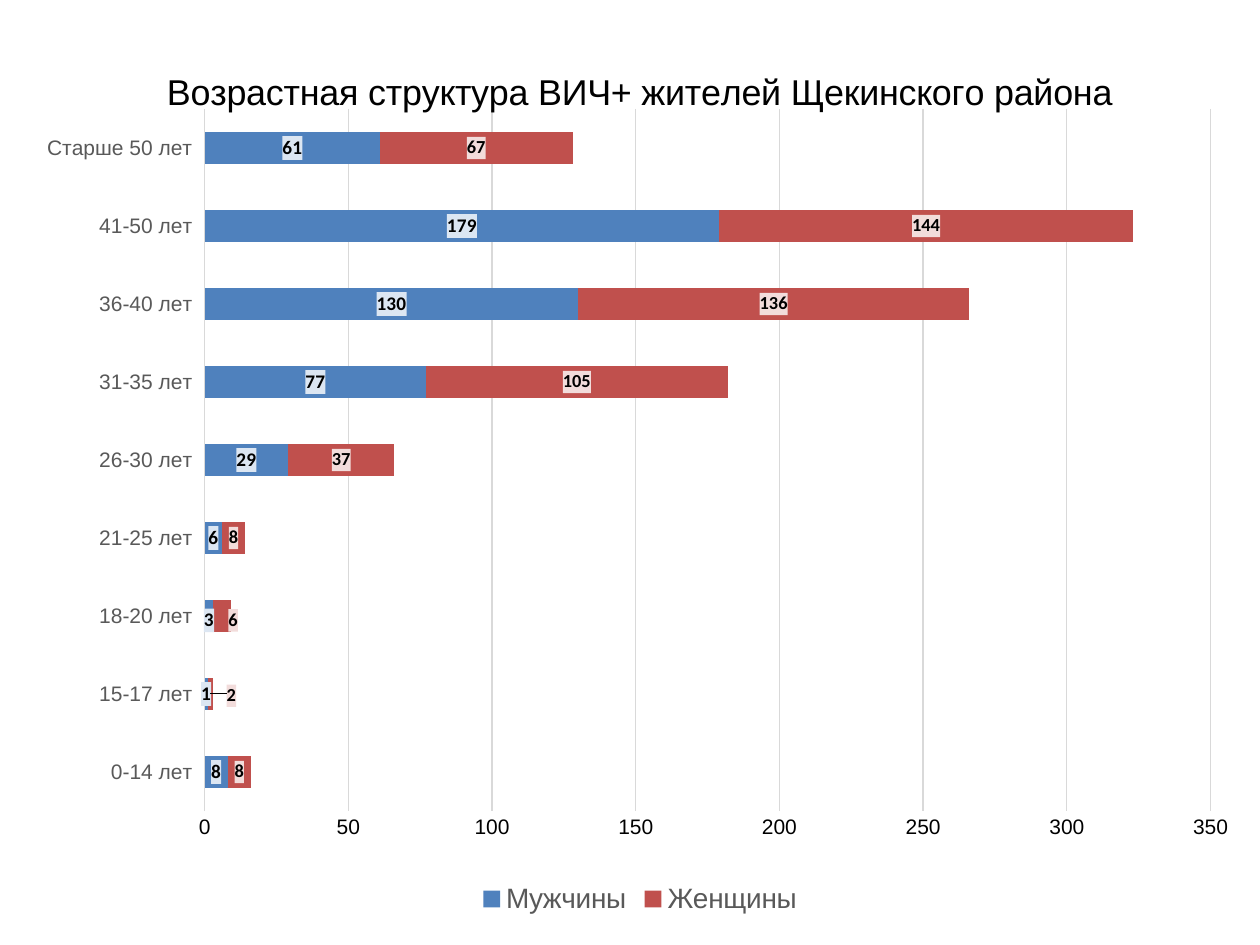
from lxml import etree
from pptx import Presentation
from pptx.chart.data import CategoryChartData
from pptx.dml.color import RGBColor
from pptx.enum.chart import XL_CHART_TYPE as ChartType
from pptx.enum.chart import XL_LABEL_POSITION as LabelPosition
from pptx.enum.chart import XL_LEGEND_POSITION as LegendPosition
from pptx.enum.chart import XL_TICK_LABEL_POSITION as TickLabels
from pptx.enum.chart import XL_TICK_MARK as TickMark
from pptx.oxml import parse_xml
from pptx.oxml.ns import nsdecls, qn
from pptx.util import Pt

TITLE = "Возрастная структура ВИЧ+ жителей Щекинского района"
AGES = ["0-14 лет", "15-17 лет", "18-20 лет", "21-25 лет", "26-30 лет",
        "31-35 лет", "36-40 лет", "41-50 лет", "Старше 50 лет"]
MEN = [8, 1, 3, 6, 29, 77, 130, 179, 61]
WOMEN = [8, 2, 6, 8, 37, 105, 136, 144, 67]
NUMBER_FORMAT = "0;[Red]0"
BLACK, GRAY, RULE = "000000", "595959", "D9D9D9"


def color(value):
    return RGBColor.from_string(value)


def style_font(font, size, value, name="Arial", bold=False):
    font.size = Pt(size)
    font.name = name
    font.bold = bold
    font.color.rgb = color(value)


def style_line(line, value):
    line.color.rgb = color(value)
    line.width = Pt(0.75)


def set_layout(parent, position, **settings):
    old = parent.find(qn("c:layout"))
    if old is not None:
        parent.remove(old)
    layout = parse_xml(f"<c:layout {nsdecls('c')}><c:manualLayout/></c:layout>")
    for tag, value in settings.items():
        etree.SubElement(layout[0], qn(f"c:{tag}")).set("val", str(value))
    parent.insert(position, layout)


def fill_label(element, value):
    fill = parse_xml(
        f'<c:spPr {nsdecls("c", "a")}><a:solidFill><a:srgbClr val="{value}"/>'
        "</a:solidFill><a:ln><a:noFill/></a:ln></c:spPr>")
    element.find(qn("c:txPr")).addprevious(fill)


def style_series(series, bar_color, label_color, size, offsets):
    series.format.fill.solid()
    series.format.fill.fore_color.rgb = color(bar_color)
    series.invert_if_negative = False
    labels = series.data_labels
    labels.show_value = True
    labels.number_format = NUMBER_FORMAT
    labels.number_format_is_linked = False
    labels.position = LabelPosition.CENTER
    style_font(labels.font, size, BLACK, "Calibri", True)
    fill_label(labels._element, label_color)
    for index in offsets:
        label = series.points[index].data_label
        style_font(label.font, size, BLACK, "Calibri", True)
        label.position = LabelPosition.CENTER
    for element in labels._element.findall(qn("c:dLbl")):
        fill_label(element, label_color)
        x, y = offsets[int(element.find(qn("c:idx")).get("val"))]
        set_layout(element, 1, x=x, y=y)


def style_axes(chart):
    ages, counts = chart.category_axis, chart.value_axis
    for axis, value in ((ages, GRAY), (counts, BLACK)):
        axis.major_tick_mark = axis.minor_tick_mark = TickMark.NONE
        style_font(axis.tick_labels.font, 12, value)
    ages.tick_label_position = TickLabels.LOW
    style_line(ages.format.line, RULE)
    counts.minimum_scale, counts.maximum_scale, counts.major_unit = 0, 350, 50
    counts.tick_labels.number_format = NUMBER_FORMAT
    counts.tick_labels.number_format_is_linked = False
    counts.format.line.fill.background()
    style_line(counts.major_gridlines.format.line, RULE)


def add_title(chart):
    title = chart.chart_title
    para = title.text_frame.paragraphs[0]
    para.text = TITLE
    style_font(para.font, 20.5, BLACK)
    title.include_in_layout = False
    set_layout(title._element, 1, xMode="edge", yMode="edge", x=0.11, y=0.03)


def add_legend(chart):
    chart.has_legend = True
    chart.legend.position = LegendPosition.BOTTOM
    chart.legend.include_in_layout = False
    style_font(chart.legend.font, 16, GRAY)


def add_age_chart(page):
    data = CategoryChartData(number_format=NUMBER_FORMAT)
    data.categories = AGES
    data.add_series("Мужчины", MEN)
    data.add_series("Женщины", WOMEN)
    chart = page.shapes.add_chart(
        ChartType.BAR_STACKED, Pt(14.4), Pt(20.9), Pt(702.7), Pt(504.7), data).chart
    style_font(chart.font, 10, BLACK, "Calibri")
    plot = chart.plots[0]
    plot.gap_width, plot.overlap = 150, 100
    plot.vary_by_categories = False
    men, women = plot.series
    style_series(men, "4F81BD", "DCE6F2", 11, {2: (0, 0.005)})
    style_series(women, "C0504D", "F2DCDB", 10.5,
                 {1: (0.017, 0.002), 2: (0.009, 0.005)})
    style_axes(chart)
    add_title(chart)
    add_legend(chart)
    area = chart._chartSpace.find(qn("c:chart")).find(qn("c:plotArea"))
    set_layout(area, 0, layoutTarget="inner", xMode="edge", yMode="edge",
               x=0.146, y=0.082, w=0.818, h=0.795)


def main():
    deck = Presentation()
    deck.slide_width, deck.slide_height = Pt(720), Pt(540)
    page = deck.slides.add_slide(deck.slide_layouts[6])
    add_age_chart(page)
    deck.save("out.pptx")


if __name__ == "__main__":
    main()
